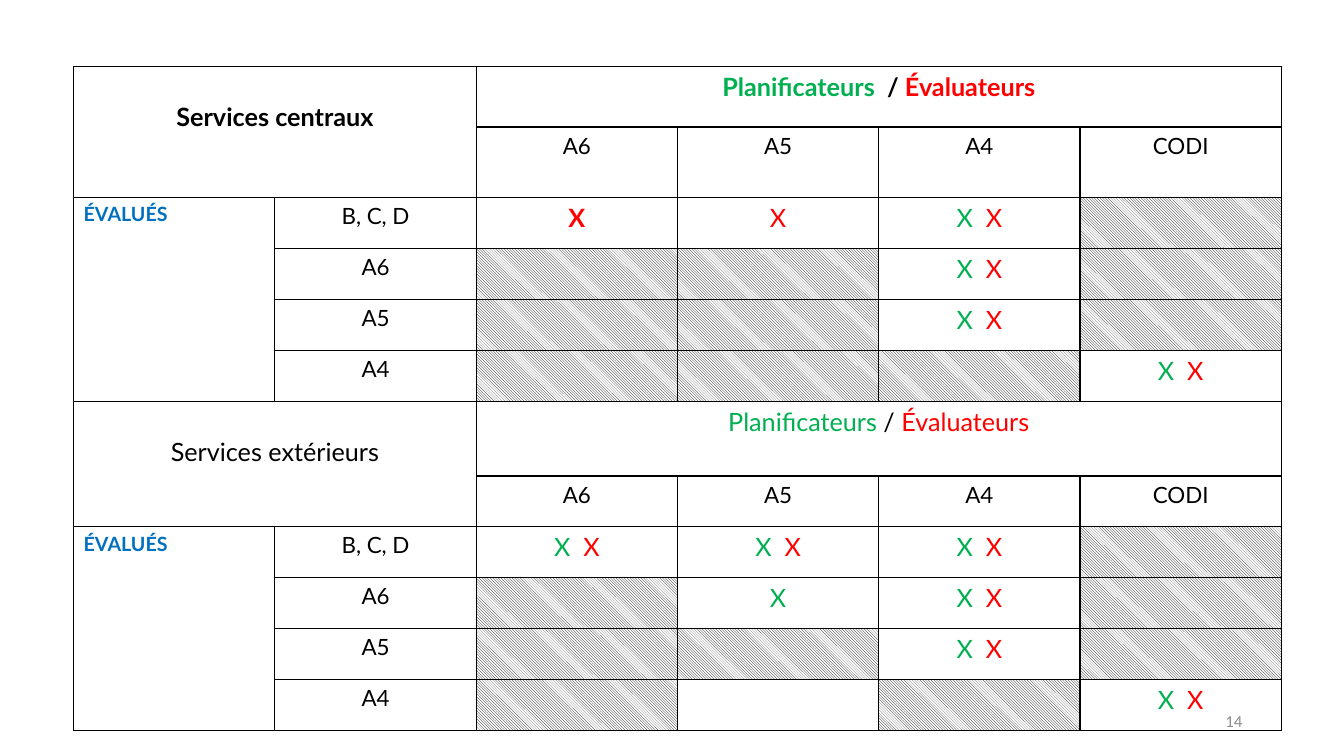
from lxml import etree
from pptx import Presentation
from pptx.dml.color import RGBColor
from pptx.enum.dml import MSO_PATTERN
from pptx.enum.text import MSO_ANCHOR, PP_ALIGN
from pptx.oxml.ns import qn
from pptx.util import Inches, Pt

HATCH = MSO_PATTERN.LIGHT_DOWNWARD_DIAGONAL
CENTER, LEFT, RIGHT = PP_ALIGN.CENTER, PP_ALIGN.LEFT, PP_ALIGN.RIGHT
COLORS = {"black": "000000", "white": "FFFFFF", "green": "00B050",
          "red": "FF0000", "blue": "0070C0", "grey": "8C8C8C"}


def write(frame, runs, size, align=CENTER, bold=False, font="Lato"):
    paragraph = frame.paragraphs[0]
    paragraph.alignment = align
    for text, color in runs:
        run = paragraph.add_run()
        run.text = text
        for name, value in {"size": Pt(size), "bold": bold, "name": font}.items():
            setattr(run.font, name, value)
        run.font.color.rgb = RGBColor.from_string(COLORS[color])


def add_borders(cell):
    properties = cell._tc.get_or_add_tcPr()
    for index, side in enumerate(("lnL", "lnR", "lnT", "lnB")):
        line = etree.Element(qn(f"a:{side}"), w=str(Pt(1)))
        fill = etree.SubElement(line, qn("a:solidFill"))
        etree.SubElement(fill, qn("a:srgbClr"), val=COLORS["black"])
        properties.insert(index, line)


prs = Presentation()
prs.slide_width, prs.slide_height = Inches(13.33), Inches(7.5)
slide = prs.slides.add_slide(prs.slide_layouts[6])

# Page number, behind the table
page_number = slide.shapes.add_textbox(Inches(9.42), Inches(6.95), Inches(3), Inches(0.4)).text_frame
page_number.word_wrap = True
page_number.vertical_anchor = MSO_ANCHOR.MIDDLE
write(page_number, [("14", "grey")], 12, RIGHT, font="Calibri")

# Table grid
TABLE_WIDTH, TABLE_HEIGHT = 11.98, 6.59
HEADER_HEIGHTS = {0: 0.6, 1: 0.7, 6: 0.74}
ROWS, COLS = 12, 6
table = slide.shapes.add_table(ROWS, COLS, Inches(0.73), Inches(0.66),
                               Inches(TABLE_WIDTH), Inches(TABLE_HEIGHT)).table
table.first_row = table.horz_banding = False
plain_height = (TABLE_HEIGHT - sum(HEADER_HEIGHTS.values())) / (ROWS - len(HEADER_HEIGHTS))
for index, row in enumerate(table.rows):
    row.height = Inches(HEADER_HEIGHTS.get(index, plain_height))
for column in table.columns:
    column.width = Inches(TABLE_WIDTH / COLS)
for cell in table.iter_cells():
    add_borders(cell)
    cell.fill.background()

# Marks: P planner, E evaluator, B bold evaluator, # hatched, - empty
MARKS = {"PE": [("X  ", "green"), ("X", "red")], "P": [("X", "green")],
         "E": [("X", "red")], "B": [("X", "red")]}
EVALUATED = ["B, C, D", "A6", "A5", "A4"]
EVALUATORS = ["A6", "A5", "A4", "CODI"]
SECTIONS = [
    {"top": 0, "title": "Services centraux", "planners": "Planificateurs ", "bold": True,
     "white": True, "marks": ["B E PE #", "# # PE #", "# # PE #", "# # # PE"]},
    {"top": 6, "title": "Services extérieurs", "planners": "Planificateurs", "bold": False,
     "white": False, "marks": ["PE PE PE #", "# P PE #", "# # PE #", "# - # PE"]},
]

for section in SECTIONS:
    top, bold = section["top"], section["bold"]

    # Section title and the roles heading
    title = table.cell(top, 0)
    title.merge(table.cell(top + 1, 1))
    title.margin_top, title.margin_bottom = Inches(0.35), 0
    write(title.text_frame, [(section["title"], "black")], 18, bold=bold)
    roles = table.cell(top, 2)
    roles.merge(table.cell(top, 5))
    write(roles.text_frame, [(section["planners"], "green"), (" / ", "black"),
                             ("Évaluateurs", "red")], 18, bold=bold)

    # Row and column labels
    evaluated = table.cell(top + 2, 0)
    evaluated.merge(table.cell(top + 5, 0))
    write(evaluated.text_frame, [("ÉVALUÉS", "blue")], 14, LEFT, bold=True)
    for offset, label in enumerate(EVALUATORS):
        write(table.cell(top + 1, 2 + offset).text_frame, [(label, "black")], 16)
    for offset, label in enumerate(EVALUATED):
        write(table.cell(top + 2 + offset, 1).text_frame, [(label, "black")], 16)

    # Marks and hatched cells
    for row, marks in enumerate(section["marks"], top + 2):
        for col, mark in enumerate(marks.split(), 2):
            cell = table.cell(row, col)
            if mark == "#":
                cell.fill.patterned()
                cell.fill.pattern = HATCH
                cell.fill.fore_color.rgb = RGBColor.from_string(COLORS["black"])
                cell.fill.back_color.rgb = RGBColor.from_string(COLORS["white"])
                continue
            if section["white"]:
                cell.fill.solid()
                cell.fill.fore_color.rgb = RGBColor.from_string(COLORS["white"])
            write(cell.text_frame, MARKS.get(mark, []), 18, bold=mark == "B")

prs.save("out.pptx")
